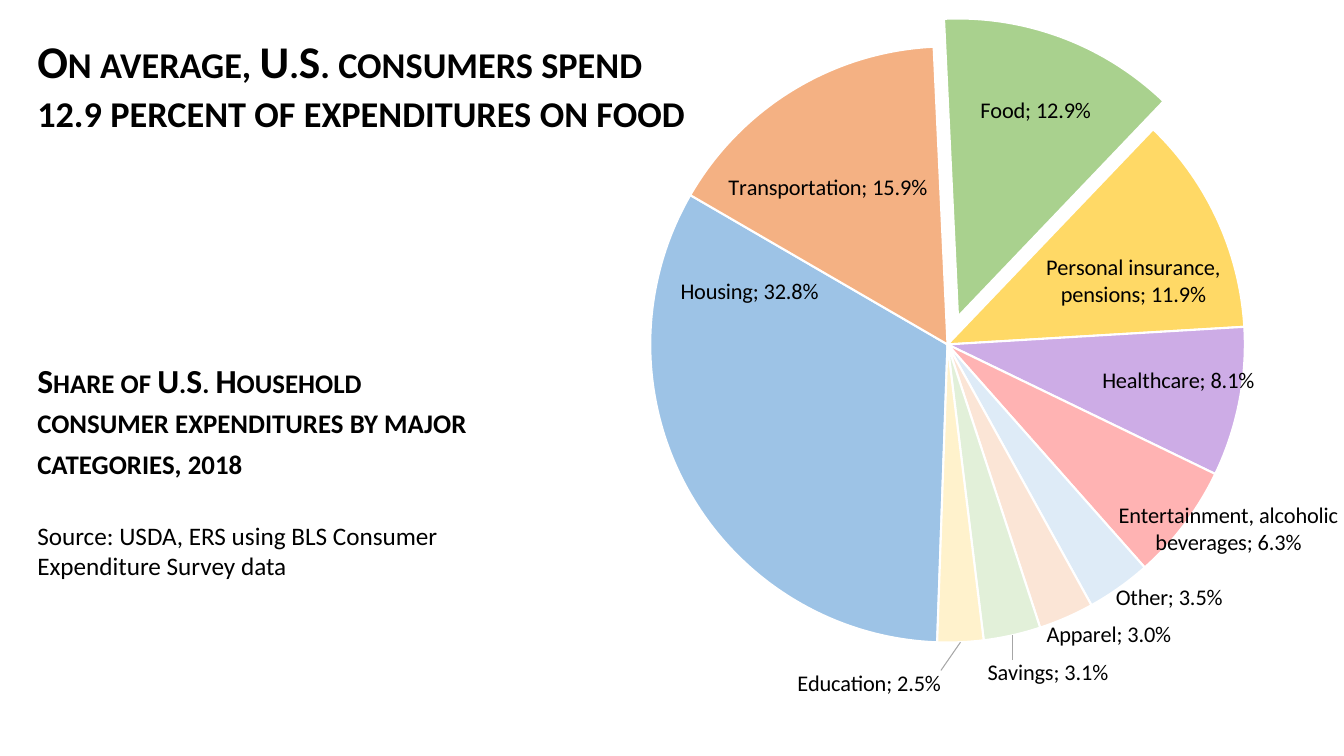
"""Build a slide with a pie chart of household spending in the U.S."""
import math

import pptx
import pptx.chart.data
import pptx.dml.color
import pptx.enum.chart
import pptx.enum.text
import pptx.oxml
import pptx.oxml.ns
import pptx.util
from pptx.util import Cm

COLORS = {
    "text": "000000",
    "paper": "FFFFFF",
    "leader": "A6A6A6",
    "Housing": "9DC3E6",
    "Transportation": "F4B183",
    "Food": "A9D18E",
    "Personal insurance, pensions": "FFD966",
    "Healthcare": "CDACE6",
    "Entertainment, alcoholic beverages": "FFB3B3",
    "Other": "DEEBF7",
    "Apparel": "FBE5D6",
    "Savings": "E2F0D9",
    "Education": "FFF2CC",
}
# category: share, label centre as fractions of the chart frame
EXPENDITURES = {
    "Housing": (0.328, 0.31, 0.45),
    "Transportation": (0.159, 0.4, 0.3),
    "Food": (0.129, 0.64, 0.19),
    "Personal insurance, pensions": (0.119, 0.76, 0.43),
    "Healthcare": (0.081, 0.81, 0.57),
    "Entertainment, alcoholic beverages": (0.063, 0.9, 0.77),
    "Other": (0.035, 0.8, 0.86),
    "Apparel": (0.03, 0.73, 0.92),
    "Savings": (0.031, 0.66, 0.97),
    "Education": (0.025, 0.45, 0.98),
}
LABEL_SIZES = {
    "Transportation": (0.17, 0.09),
    "Entertainment, alcoholic beverages": (0.18, 0.13),
}
START_ANGLE = 182
EXPLOSION = {"Food": 10}
PIE = {"x": 0.19, "y": 0.1, "w": 0.7, "h": 0.83}
LABEL_FORMAT = "0.0%"
C15 = "http://schemas.microsoft.com/office/drawing/2012/chart"


def rgb(name):
    """Return the named colour."""
    return pptx.dml.color.RGBColor.from_string(COLORS[name])


def chart_xml(tag, content):
    """Return a chart element with the given inner XML."""
    return pptx.oxml.parse_xml(
        f'<c:{tag} {pptx.oxml.ns.nsdecls("c", "a")}>{content}</c:{tag}>')


def chart_value(tag, value):
    """Return a chart element that holds one value."""
    element = chart_xml(tag, "")
    element.set("val", str(value))
    return element


def set_font(font, **values):
    """Set the font attributes and the text colour."""
    for attribute, value in {"name": "Calibri", **values}.items():
        setattr(font, attribute, value)
    font.color.rgb = rgb("text")


def add_text(slide, box, paragraphs, margin_top=Cm(0.13)):
    """Add a text box of (text, size, heading, format) paragraphs."""
    textbox = slide.shapes.add_textbox(*box)
    frame = textbox.text_frame
    frame.word_wrap = True
    frame.margin_top = margin_top
    frame.vertical_anchor = pptx.enum.text.MSO_ANCHOR.TOP
    for index, (text, size, heading, layout) in enumerate(paragraphs):
        paragraph = frame.add_paragraph() if index else frame.paragraphs[0]
        paragraph.text = text
        for attribute, value in layout.items():
            setattr(paragraph, attribute, value)
        for run in paragraph.runs:
            set_font(run.font, size=pptx.util.Pt(size), bold=heading)
            if heading:
                run.font._element.set("cap", "small")
    return textbox


def manual_layout(values):
    """Return a manual layout with the given entries."""
    entries = "".join(f'<c:{tag} val="{value}"/>' for tag, value in values.items())
    return chart_xml("layout", f"<c:manualLayout>{entries}</c:manualLayout>")


def add_label(labels, index, shift_x, shift_y, size):
    """Add a slice label moved away from the middle of its slice."""
    label = chart_xml("dLbl", f'<c:idx val="{index}"/>')
    label.append(manual_layout({"x": round(shift_x, 2), "y": round(shift_y, 2)}))
    number_format = chart_xml("numFmt", "")
    number_format.set("formatCode", LABEL_FORMAT)
    number_format.set("sourceLinked", "0")
    label.append(number_format)
    label.append(chart_value("dLblPos", "ctr"))
    for tag, shown in {"showLegendKey": 0, "showVal": 1, "showCatName": 1,
                       "showSerName": 0, "showPercent": 0,
                       "showBubbleSize": 0}.items():
        label.append(chart_value(tag, shown))
    label.append(chart_xml("separator", "; "))
    if size:
        width, height = size
        label.append(chart_xml(
            "extLst",
            f'<c:ext uri="{{CE6537A1-D6FC-4f65-9D91-7224C49458BB}}" xmlns:c15="{C15}">'
            f'<c15:layout><c:manualLayout><c:w val="{width}"/><c:h val="{height}"/>'
            '</c:manualLayout></c15:layout></c:ext>'))
    labels._element.insert(index, label)


def format_slices(series):
    """Colour, explode and label each slice."""
    labels = series.data_labels
    for attribute, value in {
        "show_value": True,
        "show_category_name": True,
        "number_format": LABEL_FORMAT,
        "number_format_is_linked": False,
        "position": pptx.enum.chart.XL_LABEL_POSITION.CENTER,
    }.items():
        setattr(labels, attribute, value)
    set_font(labels.font, size=pptx.util.Pt(16))
    for leader_switch in labels._element.xpath("c:showLeaderLines"):
        leader_switch.addnext(chart_xml(
            "leaderLines",
            '<c:spPr><a:ln w="9525"><a:solidFill>'
            f'<a:srgbClr val="{COLORS["leader"]}"/></a:solidFill></a:ln></c:spPr>'))

    total = sum(share for share, _, _ in EXPENDITURES.values())
    passed = 0
    for index, (category, (share, label_x, label_y)) in enumerate(EXPENDITURES.items()):
        wedge = series.points[index].format
        wedge.fill.solid()
        wedge.fill.fore_color.rgb = rgb(category)
        wedge.line.color.rgb = rgb("paper")
        wedge.line.width = pptx.util.Pt(1.5)
        explosion = EXPLOSION.get(category, 0)
        if explosion:
            outline = series._element.xpath(f"c:dPt[c:idx/@val={index}]/c:spPr")[0]
            outline.addprevious(chart_value("explosion", explosion))

        angle = math.radians(START_ANGLE + 360 * (passed + share / 2) / total)
        reach = 0.5 + explosion / 100
        middle_x = PIE["x"] + PIE["w"] / 2 * (1 + reach * math.sin(angle))
        middle_y = PIE["y"] + PIE["h"] / 2 * (1 - reach * math.cos(angle))
        add_label(labels, index, label_x - middle_x, label_y - middle_y,
                  LABEL_SIZES.get(category))
        passed += share


def add_pie(slide, box):
    """Add the pie chart of expenditure shares."""
    shares = pptx.chart.data.CategoryChartData(number_format=LABEL_FORMAT)
    shares.categories = list(EXPENDITURES)
    shares.add_series("Series 1", [share for share, _, _ in EXPENDITURES.values()])
    chart = slide.shapes.add_chart(
        pptx.enum.chart.XL_CHART_TYPE.PIE, *box, shares).chart
    chart.has_title = chart.has_legend = False
    set_font(chart.font, size=pptx.util.Pt(10))
    plot = chart.plots[0]
    plot.vary_by_categories = True
    format_slices(plot.series[0])

    pie = plot._element
    for angle in pie.xpath("c:firstSliceAng"):
        pie.remove(angle)
    pie.append(chart_value("firstSliceAng", START_ANGLE))
    area = pie.getparent()
    for layout in area.xpath("c:layout"):
        area.remove(layout)
    area.insert(0, manual_layout(
        {"layoutTarget": "inner", "xMode": "edge", "yMode": "edge", **PIE}))


def main():
    """Build and save the slide."""
    deck = pptx.Presentation()
    deck.slide_width, deck.slide_height = Cm(33.87), Cm(19.05)
    slide = deck.slides.add_slide(deck.slide_layouts[6])
    headline = add_text(
        slide, (Cm(0.69), Cm(1), Cm(29.21), Cm(3.68)),
        [("On average, U.S. consumers spend\v12.9 percent of expenditures on food",
          32.4, True, {"line_spacing": 0.9})], margin_top=Cm(0))
    headline.fill.solid()
    headline.fill.fore_color.rgb = rgb("paper")
    add_pie(slide, (Cm(12.32), Cm(-0.84), Cm(21.46), Cm(18.49)))
    add_text(
        slide, (Cm(0.69), Cm(8.94), Cm(12.14), Cm(6.93)),
        [("Share of U.S. Household consumer expenditures by major categories, 2018",
          24, True, {}),
         ("Source: USDA, ERS using BLS Consumer Expenditure Survey data",
          18, False, {"space_before": pptx.util.Pt(28)})])
    deck.save("out.pptx")


if __name__ == "__main__":
    main()
